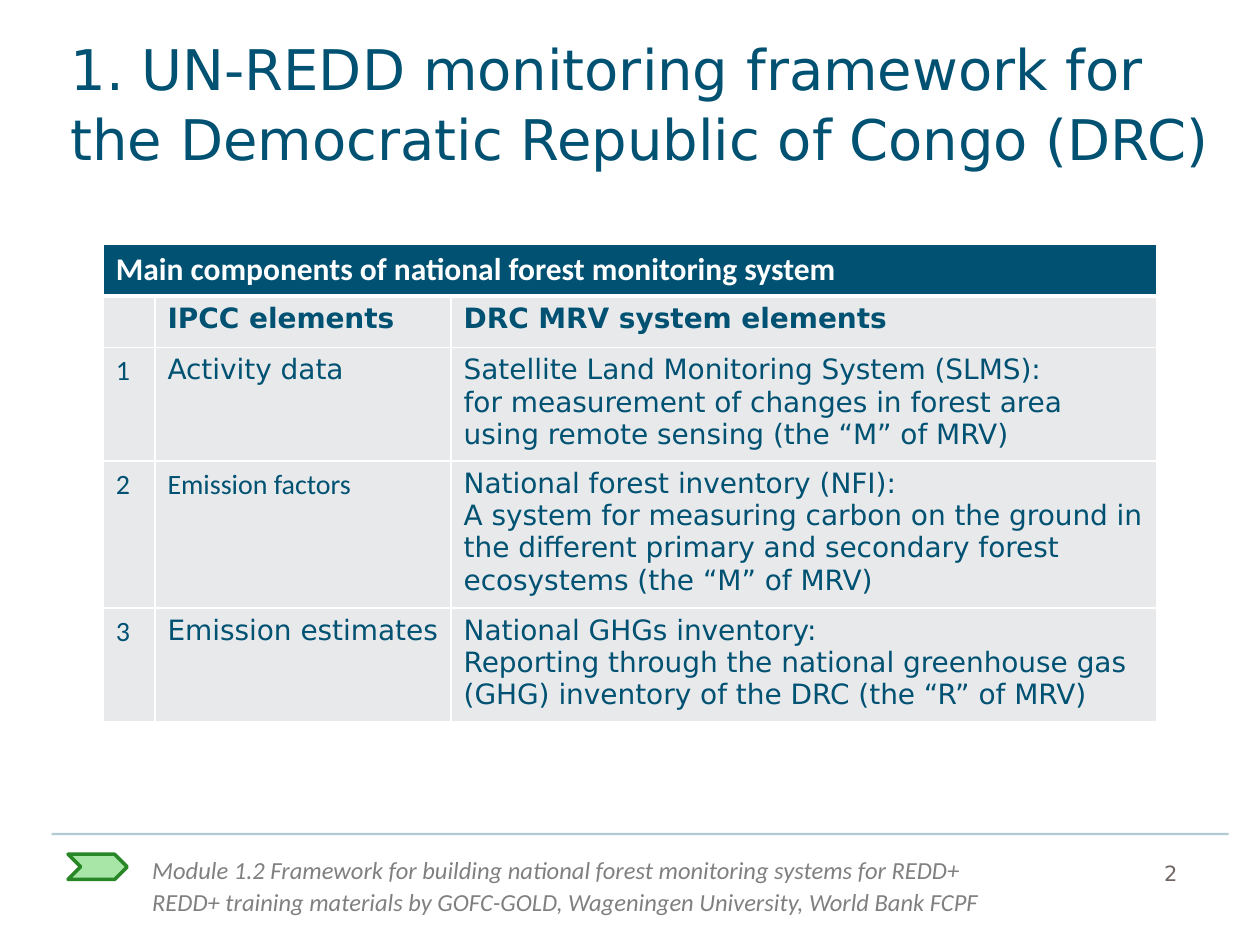
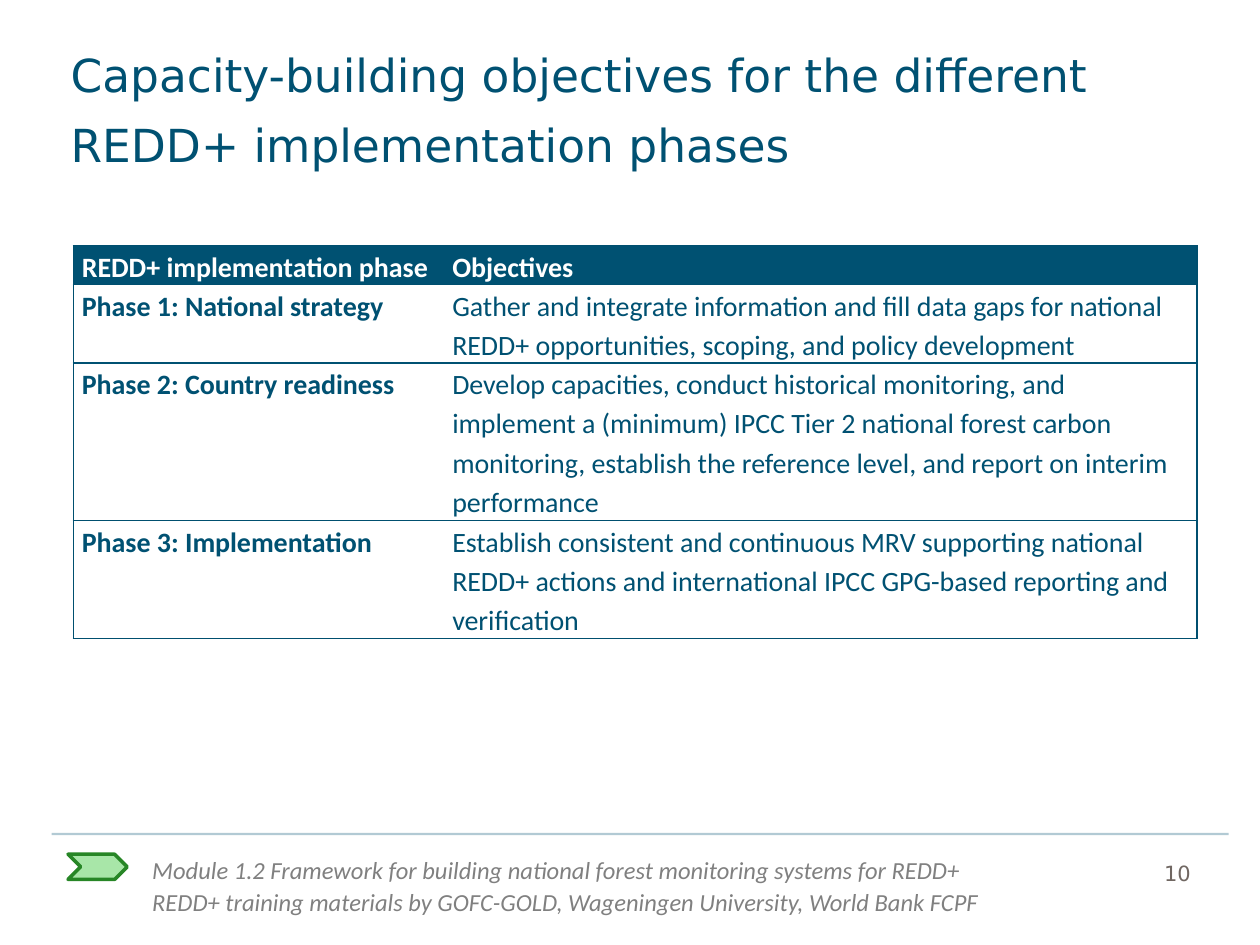
from lxml import etree
from pptx import Presentation
from pptx.dml.color import RGBColor
from pptx.enum import shapes, text
from pptx.oxml import ns
from pptx.util import Inches, Pt

COLORS = {
    "blue": "005172",
    "border": "004F6F",
    "white": "FFFFFF",
    "cell": "E7E9EB",
    "footer": "808080",
    "number": "706762",
    "arrow": "A8E6A8",
    "arrow_edge": "278626",
}
SANS, CALIBRI = "DejaVu Sans", "Calibri"
FOOTER = [
    "Module 1.2 Framework for building national forest monitoring systems for REDD+",
    "REDD+ training materials by GOFC-GOLD, Wageningen University, World Bank FCPF",
]
TITLE_ONLY = 5


class Deck:
    """Holds the shared style, the presentation and the current slide."""

    def __init__(self):
        self.presentation = Presentation()
        self.presentation.slide_width = Inches(10)
        self.presentation.slide_height = Inches(7.5)
        self.slide = None

    def color(self, name):
        return RGBColor.from_string(COLORS[name])

    def fill_text(self, frame, lines, spacing, color="blue", **font_values):
        """Fill a text frame with one left-aligned paragraph per line."""
        frame.word_wrap = True
        for index, line in enumerate(lines):
            paragraph = frame.add_paragraph() if index else frame.paragraphs[0]
            paragraph.alignment = text.PP_ALIGN.LEFT
            paragraph.line_spacing = spacing
            run = paragraph.add_run()
            run.text = line
            for name, value in font_values.items():
                setattr(run.font, name, value)
            run.font.color.rgb = self.color(color)

    def new_slide(self, title, size, height, number):
        layout = self.presentation.slide_layouts[TITLE_ONLY]
        self.slide = self.presentation.slides.add_slide(layout)
        self.title(title, size, height)
        self.text_box((1.11, 6.72, 7.73, 0.61), FOOTER, color="footer",
                      name=CALIBRI, size=Pt(14), italic=True)
        self.chevron(0.54, 6.78, 0.47, 0.2)
        self.text_box((9.14, 6.73, 0.61, 0.33), [str(number)], color="number",
                      name=SANS, size=Pt(12))
        self.rule(0.41, 9.75, 6.62)

    def title(self, title, size, height):
        shape = self.slide.shapes.title
        box = {"left": 0.54, "top": 0.25, "width": 9.23, "height": height}
        for name, value in box.items():
            setattr(shape, name, Inches(value))
        frame = shape.text_frame
        values = {
            "margin_left": Inches(0.02),
            "margin_top": 0,
            "margin_right": Inches(0.1),
            "margin_bottom": Inches(0.35),
            "vertical_anchor": text.MSO_ANCHOR.TOP,
            "auto_size": text.MSO_AUTO_SIZE.NONE,
        }
        for name, value in values.items():
            setattr(frame, name, value)
        self.fill_text(frame, [title], Pt(40), name=SANS, size=Pt(size))

    def text_box(self, box, lines, **font_values):
        shape = self.slide.shapes.add_textbox(*map(Inches, box))
        self.fill_text(shape.text_frame, lines, Pt(18), **font_values)

    def chevron(self, *box):
        shape = self.slide.shapes.add_shape(shapes.MSO_SHAPE.CHEVRON, *map(Inches, box))
        shape.shadow.inherit = False
        shape.fill.solid()
        shape.fill.fore_color.rgb = self.color("arrow")
        shape.line.color.rgb = self.color("arrow_edge")
        shape.line.width = Pt(2)

    def rule(self, left, right, top):
        """Draw the pale line above the footer."""
        line = self.slide.shapes.add_connector(
            shapes.MSO_CONNECTOR.STRAIGHT, *map(Inches, (left, top, right, top)))
        line.line.color.rgb = self.color("blue")
        line.line.width = Pt(1.25)
        properties = line._element.spPr
        color = properties.find(".//" + ns.qn("a:srgbClr"))
        etree.SubElement(color, ns.qn("a:alpha"), val="30000")
        etree.SubElement(properties, ns.qn("a:effectLst"))

    def table(self, left, top, widths, heights):
        box = (left, top, sum(widths), sum(heights))
        table = self.slide.shapes.add_table(
            len(heights), len(widths), *map(Inches, box)).table
        table.horz_banding = False
        for column, width in zip(table.columns, widths):
            column.width = Inches(width)
        for row, height in zip(table.rows, heights):
            row.height = Inches(height)
        return table

    def cell(self, cell, lines, fill, borders, margins=None, spacing=1.0, **font_values):
        """Format a cell; borders maps the sides L, R, T, B to (colour, points) or None."""
        properties = cell._tc.get_or_add_tcPr()
        for side in "LRTB":
            edge = borders.get(side)
            line = etree.SubElement(properties, ns.qn("a:ln" + side))
            if edge:
                color, points = edge
                line.set("w", str(Pt(points)))
                paint = etree.SubElement(line, ns.qn("a:solidFill"))
                etree.SubElement(paint, ns.qn("a:srgbClr"), val=COLORS[color])
            else:
                etree.SubElement(line, ns.qn("a:noFill"))
        if fill:
            cell.fill.solid()
            cell.fill.fore_color.rgb = self.color(fill)
        else:
            cell.fill.background()
        for name, value in (margins or {}).items():
            setattr(cell, name, Inches(value))
        self.fill_text(cell.text_frame, lines, spacing, **font_values)


def monitoring_slide(deck):
    deck.new_slide("1. UN-REDD monitoring framework for the Democratic Republic of Congo (DRC)",
                   32, 1.48, 2)
    rows = [
        [["Main components of national forest monitoring system"], [], []],
        [[], ["IPCC elements"], ["DRC MRV system elements"]],
        [["1"], ["Activity data"],
         ["Satellite Land Monitoring System (SLMS):",
          "for measurement of changes in forest area using remote sensing (the “M” of MRV)"]],
        [["2"], ["Emission factors"],
         ["National forest inventory (NFI):",
          "A system for measuring carbon on the ground in the different primary and "
          "secondary forest ecosystems (the “M” of MRV)"]],
        [["3"], ["Emission estimates"],
         ["National GHGs inventory:",
          "Reporting through the national greenhouse gas (GHG) inventory of the DRC "
          "(the “R” of MRV)"]],
    ]
    table = deck.table(0.82, 1.94, [0.41, 2.35, 5.6], [0.41, 0.41, 0.87, 1.13, 0.87])
    table.cell(0, 0).merge(table.cell(0, 2))
    thin, thick = ("white", 1), ("white", 3)
    for r, row in enumerate(rows):
        header = r == 0
        for c, lines in enumerate(row):
            borders = dict.fromkeys("LRTB", thin)
            if r < 2:
                borders["B" if header else "T"] = thick
            calibri = c == 0 or lines == ["Emission factors"]
            deck.cell(table.cell(r, c), lines, "blue" if header else "cell", borders,
                      color="white" if header else "blue",
                      name=CALIBRI if calibri else SANS,
                      size=Pt(18 if header else 16), bold=r < 2)


def objectives_slide(deck):
    deck.new_slide("Capacity-building objectives for the different REDD+ implementation phases",
                   26, 1.42, 10)
    rows = [
        ["REDD+ implementation phase", "Objectives"],
        ["Phase 1: National strategy",
         "Gather and integrate information and fill data gaps for national REDD+ "
         "opportunities, scoping, and policy development"],
        ["Phase 2: Country readiness",
         "Develop capacities, conduct historical monitoring, and implement a (minimum) "
         "IPCC Tier 2 national forest carbon monitoring, establish the reference level, "
         "and report on interim performance"],
        ["Phase 3: Implementation",
         "Establish consistent and continuous MRV supporting national REDD+ actions and "
         "international IPCC GPG-based reporting and verification"],
    ]
    table = deck.table(0.58, 1.95, [2.94, 5.98], [0.31, 0.62, 1.25, 0.94])
    margins = {"margin_left": 0.07, "margin_right": 0.07, "margin_top": 0, "margin_bottom": 0}
    thin, thick = ("border", 0.75), ("blue", 1.5)
    for r, row in enumerate(rows):
        header = r == 0
        for c, line in enumerate(row):
            borders = {"L" if c == 0 else "R": thin,
                       "T": thick if r == 2 else thin,
                       "B": thick if r == 1 else thin}
            deck.cell(table.cell(r, c), [line], "blue" if header else None, borders,
                      margins, 1.15, color="white" if header else "blue",
                      name=CALIBRI, size=Pt(16), bold=header or c == 0)


def main():
    deck = Deck()
    monitoring_slide(deck)
    objectives_slide(deck)
    deck.presentation.save("out.pptx")


if __name__ == "__main__":
    main()
